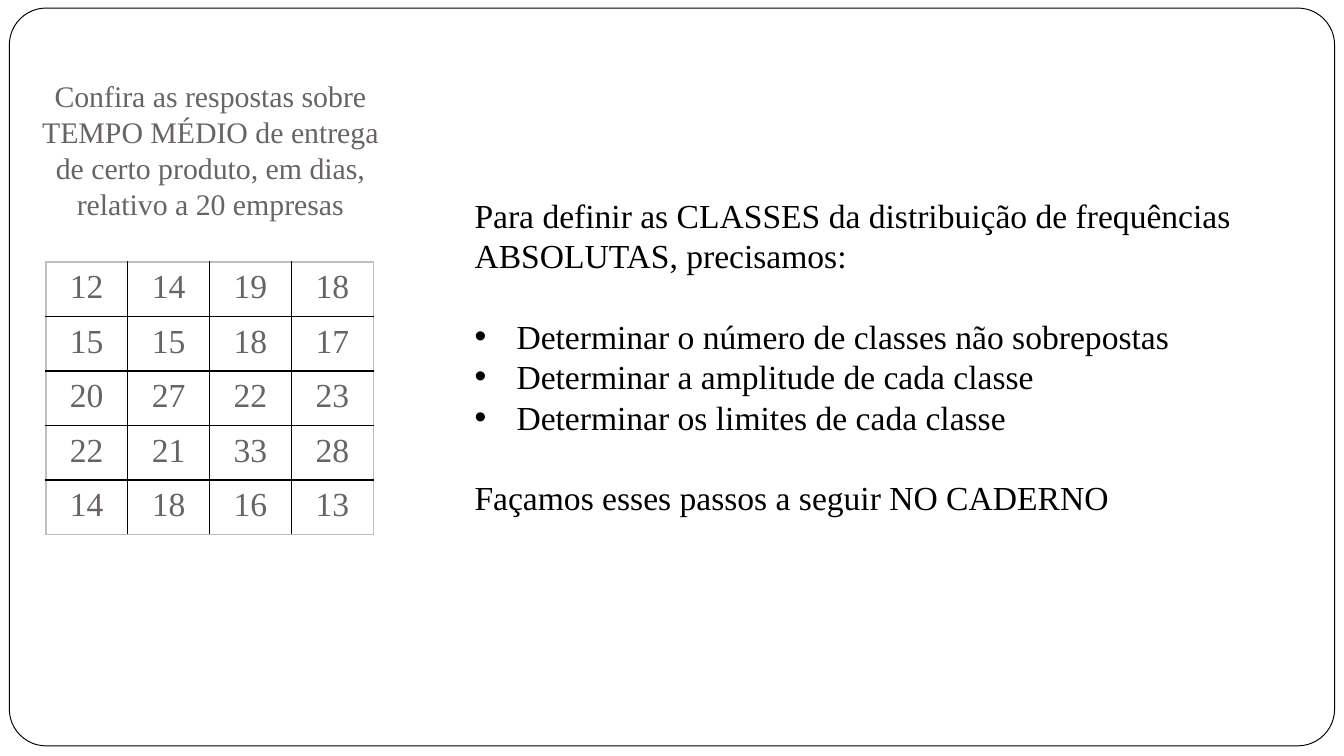
from pptx import Presentation
from pptx.dml.color import RGBColor
from pptx.enum.shapes import MSO_SHAPE
from pptx.enum.text import MSO_ANCHOR, PP_ALIGN
from pptx.oxml import parse_xml
from pptx.oxml.ns import nsdecls
from pptx.util import Pt

FONT = "Times New Roman"
BLACK, GREY, PALE, WHITE = "000000", "696464", "BFBFBF", "FFFFFF"
TITLE = ("Confira as respostas sobre TEMPO MÉDIO de entrega "
         "de certo produto, em dias, relativo a 20 empresas")
DAYS = [
    (12, 14, 19, 18),
    (15, 15, 18, 17),
    (20, 27, 22, 23),
    (22, 21, 33, 28),
    (14, 18, 16, 13),
]
INTRO = ("Para definir as CLASSES da distribuição de frequências "
         "ABSOLUTAS, precisamos:")
STEPS = [
    "Determinar o número de classes não sobrepostas",
    "Determinar a amplitude de cada classe",
    "Determinar os limites de cada classe",
]
CLOSE = "Façamos esses passos a seguir NO CADERNO"
WIDE, HIGH = 43.9, 29.2
LINE = 21.6


def paint(item, color):
    item.solid()
    item.fore_color.rgb = RGBColor.from_string(color)


def style(para, size, color, align=PP_ALIGN.LEFT):
    para.alignment = align
    para.font.name = FONT
    para.font.size = Pt(size)
    paint(para.font.fill, color)


def place(shape, left, top, width, height):
    shape.left, shape.top = Pt(left), Pt(top)
    shape.width, shape.height = Pt(width), Pt(height)
    frame = shape.text_frame
    frame.word_wrap = True
    frame.vertical_anchor = MSO_ANCHOR.TOP
    return frame


def bullet(para, mark):
    props = para._p.get_or_add_pPr()
    indent = Pt(22.5) if mark else 0
    props.set("marL", str(indent))
    props.set("indent", str(-indent))
    if mark:
        props.append(parse_xml(f'<a:buFont {nsdecls("a")} typeface="Arial"/>'))
        props.append(parse_xml(f'<a:buChar {nsdecls("a")} char="{mark}"/>'))
    else:
        props.append(parse_xml(f'<a:buNone {nsdecls("a")}/>'))


def border(cell, side, color):
    props = cell._tc.get_or_add_tcPr()
    props.append(parse_xml(
        f'<a:{side} {nsdecls("a")} w="{Pt(1)}"><a:solidFill>'
        f'<a:srgbClr val="{color}"/></a:solidFill></a:{side}>'))


deck = Presentation()
deck.slide_width, deck.slide_height = Pt(720), Pt(405)
slide = deck.slides.add_slide(deck.slide_layouts[1])
shapes = slide.shapes
title, body = shapes.title, slide.placeholders[1]

card = shapes.add_shape(MSO_SHAPE.ROUNDED_RECTANGLE,
                        Pt(5), Pt(4.3), Pt(710), Pt(395.3))
card.adjustments[0] = 0.05
card.shadow.inherit = False
paint(card.fill, WHITE)
paint(card.line.fill, BLACK)
card.line.width = Pt(0.5)
title._element.addprevious(card._element)

frame = place(title, 8, 38.2, 209.5, 85)
frame.text = TITLE
style(frame.paragraphs[0], 16, GREY, PP_ALIGN.CENTER)
frame.paragraphs[0].line_spacing = Pt(19.2)

rows, cols = len(DAYS), len(DAYS[0])
table = shapes.add_table(rows, cols, Pt(24.5), Pt(140.4),
                         Pt(WIDE * cols), Pt(HIGH * rows)).table
table.first_row = table.horz_banding = False
for col in table.columns:
    col.width = Pt(WIDE)
for r, days in enumerate(DAYS):
    table.rows[r].height = Pt(HIGH)
    for c, day in enumerate(days):
        cell = table.cell(r, c)
        cell.text = str(day)
        style(cell.text_frame.paragraphs[0], 18, GREY, PP_ALIGN.CENTER)
        edges = {"lnL": c == 0, "lnR": c == cols - 1,
                 "lnT": r == 0, "lnB": r == rows - 1}
        for side, outer in edges.items():
            border(cell, side, PALE if outer else BLACK)
        paint(cell.fill, WHITE)

frame = place(body, 247, 100.8, 419.8, 203.8)
lines = [(INTRO, "", 0), *((step, "•", 0) for step in STEPS),
         (CLOSE, "", LINE)]
frame.text = "\n".join(text for text, mark, gap in lines)
for para, (text, mark, gap) in zip(frame.paragraphs, lines):
    style(para, 18, BLACK)
    para.line_spacing = Pt(LINE)
    para.space_before = Pt(gap)
    para.space_after = Pt(LINE if text == INTRO else 0)
    bullet(para, mark)

deck.save("out.pptx")
